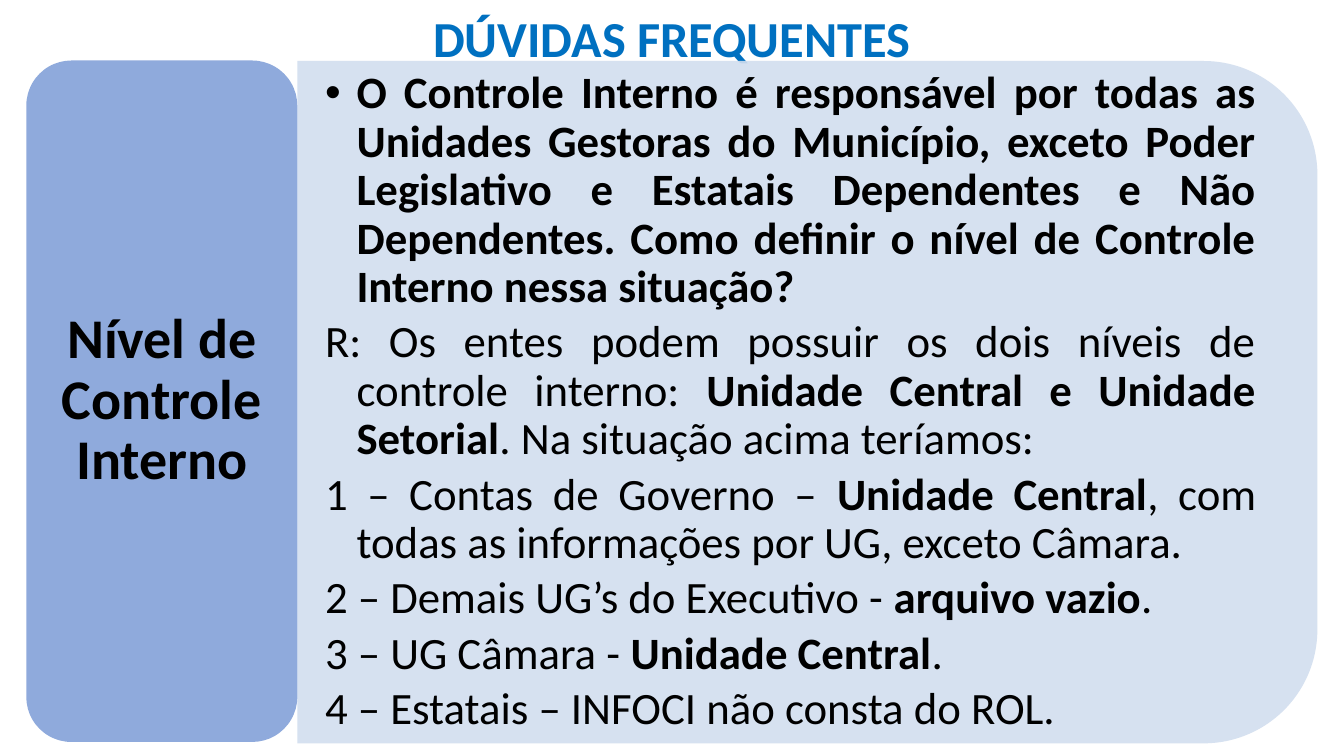
from lxml import etree
from pptx import Presentation
from pptx.dml.color import RGBColor
from pptx.enum import shapes, text
from pptx.oxml import ns
from pptx.util import Pt

FONT = "Calibri"
BLACK = "000000"
HANGING = Pt(22.5)
# Asterisks enclose the bold passages.
ANSWERS = [
    "*O Controle Interno é responsável por todas as Unidades Gestoras do Município, "
    "exceto Poder Legislativo e Estatais Dependentes e Não Dependentes. "
    "Como definir o nível de Controle Interno nessa situação?*",
    "R: Os entes podem possuir os dois níveis de controle interno: "
    "*Unidade Central e Unidade Setorial*. Na situação acima teríamos:",
    "1 – Contas de Governo – *Unidade Central*, com todas as informações por UG, "
    "exceto Câmara.",
    "2 – Demais UG’s do Executivo - *arquivo vazio*.",
    "3 – UG Câmara - *Unidade Central*.",
    "4 – Estatais – INFOCI não consta do ROL.",
]


def color(value):
    return RGBColor.from_string(value)


def add_filled(page, kind, left, top, width, height, fill):
    shape = page.shapes.add_shape(kind, Pt(left), Pt(top), Pt(width), Pt(height))
    shape.shadow.inherit = False
    shape.fill.solid()
    shape.fill.fore_color.rgb = color(fill)
    shape.line.fill.background()
    return shape


def add_text_frame(page, left, top, width, height, margins, anchor):
    box = page.shapes.add_textbox(Pt(left), Pt(top), Pt(width), Pt(height))
    frame = box.text_frame
    frame.word_wrap = True
    frame.vertical_anchor = anchor
    frame.margin_left = frame.margin_right = Pt(margins[0])
    frame.margin_top = frame.margin_bottom = Pt(margins[1])
    return frame


def style(para, size, align, ink=BLACK, bold=None):
    para.alignment = align
    para.font.name = FONT
    para.font.size = Pt(size)
    para.font.bold = bold
    para.font.color.rgb = color(ink)


def hang(para, bullet):
    """Give the paragraph a hanging indent, with or without a bullet."""
    props = para._p.get_or_add_pPr()
    props.set("marL", str(HANGING))
    props.set("indent", str(-HANGING))
    if bullet:
        font = etree.SubElement(props, ns.qn("a:buFont"))
        font.set("typeface", "Arial")
        etree.SubElement(props, ns.qn("a:buChar")).set("char", "•")
    else:
        etree.SubElement(props, ns.qn("a:buNone"))


def add_title(page, left, top, width, height):
    frame = add_text_frame(page, left, top, width, height, (7.2, 3.6),
                           text.MSO_ANCHOR.TOP)
    para = frame.paragraphs[0]
    para.text = "DÚVIDAS FREQUENTES"
    style(para, 36, text.PP_ALIGN.CENTER, "0070C0", True)


def add_answers(page, left, top, width, height):
    # A quarter turn swaps the sides, so the panel is placed by its centre.
    panel = add_filled(page, shapes.MSO_SHAPE.ROUND_2_SAME_RECTANGLE,
                       left + (width - height) / 2, top + (height - width) / 2,
                       height, width, "D2DEEF")
    panel.rotation = 90
    tint = panel._element.spPr.find(".//" + ns.qn("a:srgbClr"))
    etree.SubElement(tint, ns.qn("a:alpha")).set("val", "90000")

    inset = 23.8
    frame = add_text_frame(page, left, top + inset, width - inset,
                           height - 2 * inset, (19.8, 9.9),
                           text.MSO_ANCHOR.MIDDLE)
    for number, answer in enumerate(ANSWERS):
        para = frame.paragraphs[0] if number == 0 else frame.add_paragraph()
        para.line_spacing = 0.9
        para.space_after = Pt(5)
        hang(para, bullet=number == 0)
        style(para, 32, text.PP_ALIGN.JUSTIFY)
        for part, words in enumerate(answer.split("*")):
            if words:
                span = para.add_run()
                span.text = words
                span.font.bold = part % 2 == 1


def add_topic(page, left, top, width, height):
    add_filled(page, shapes.MSO_SHAPE.ROUNDED_RECTANGLE,
               left, top, width, height, "8FAADC")
    inset = 9.4
    frame = add_text_frame(page, left + inset, top + inset, width - 2 * inset,
                           height - 2 * inset, (12, 6), text.MSO_ANCHOR.MIDDLE)
    para = frame.paragraphs[0]
    para.text = "Nível de Controle Interno"
    para.line_spacing = 0.9
    style(para, 40, text.PP_ALIGN.CENTER, bold=True)


def main():
    deck = Presentation()
    deck.slide_width, deck.slide_height = Pt(960), Pt(540)
    page = deck.slides.add_slide(deck.slide_layouts[6])
    add_title(page, 52, 1.5, 856, 51)
    add_answers(page, 212.4, 43.6, 728.6, 487.4)
    add_topic(page, 18.8, 43.2, 193.6, 486.8)
    deck.save("out.pptx")


if __name__ == "__main__":
    main()
